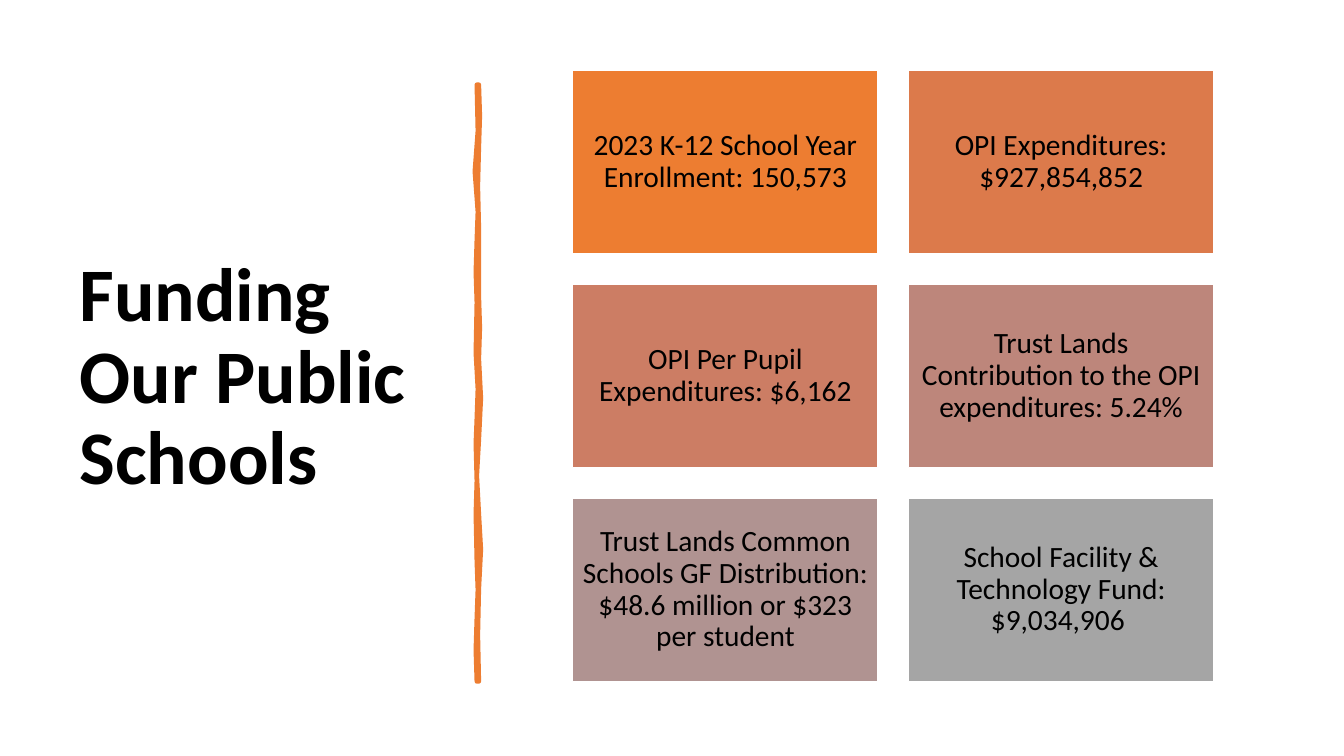
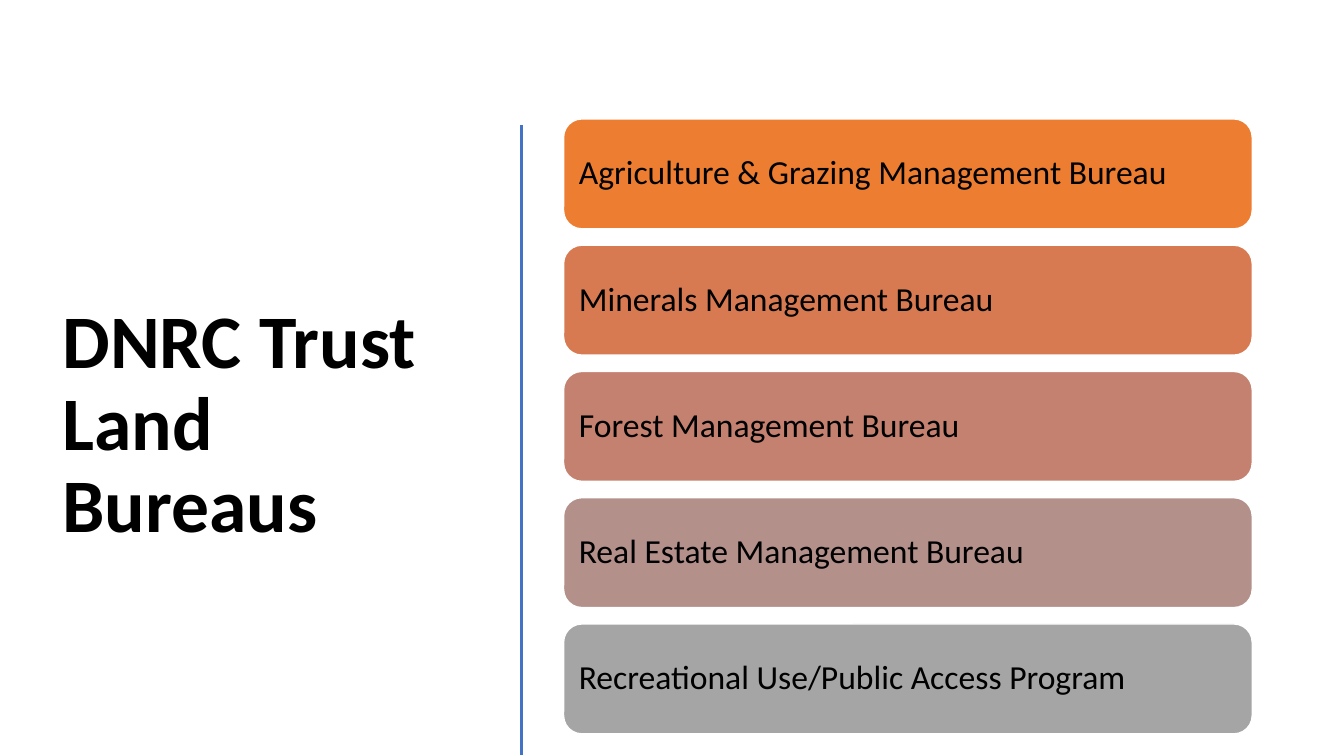
import pptx
import pptx.util
import pptx.dml.color
import pptx.enum.shapes
import pptx.enum.text
import pptx.oxml.ns
import lxml.etree

Inches = pptx.util.Inches
Pt = pptx.util.Pt
RGBColor = pptx.dml.color.RGBColor
PP_ALIGN = pptx.enum.text.PP_ALIGN
MSO_SHAPE = pptx.enum.shapes.MSO_SHAPE

FONT = "Calibri"
BLACK = RGBColor(0x00, 0x00, 0x00)
WHITE = RGBColor(0xFF, 0xFF, 0xFF)
ORANGE = RGBColor(0xED, 0x7D, 0x31)
BLUE = RGBColor(0x44, 0x72, 0xC4)
GRAY = RGBColor(0xA5, 0xA5, 0xA5)
TITLE_ONLY_LAYOUT = 5

FUNDING_FACTS = [
    ("2023 K-12 School Year Enrollment: 150,573", ORANGE),
    ("OPI Expenditures: $927,854,852", RGBColor(0xDC, 0x7A, 0x4B)),
    ("OPI Per Pupil Expenditures: $6,162", RGBColor(0xCC, 0x7D, 0x64)),
    ("Trust Lands Contribution to the OPI expenditures: 5.24%",
     RGBColor(0xBD, 0x86, 0x7B)),
    ("Trust Lands Common Schools GF Distribution: "
     "$48.6 million or $323 per student", RGBColor(0xB0, 0x93, 0x91)),
    ("School Facility & Technology Fund: $9,034,906 ", GRAY),
]
BUREAUS = [
    ("Agriculture & Grazing Management Bureau", ORANGE),
    ("Minerals Management Bureau", RGBColor(0xD8, 0x7A, 0x51)),
    ("Forest Management Bureau", RGBColor(0xC4, 0x81, 0x70)),
    ("Real Estate Management Bureau", RGBColor(0xB4, 0x90, 0x8B)),
    ("Recreational Use/Public Access Program", GRAY),
]
BRUSH_OUTLINE = [
    (4.75, 0.84), (4.76, 1.15), (4.75, 1.46), (4.74, 1.85), (4.75, 2.26),
    (4.75, 2.94), (4.76, 3.25), (4.75, 3.56), (4.77, 3.95), (4.75, 4.36),
    (4.73, 4.72), (4.75, 5.1), (4.77, 5.45), (4.75, 5.84), (4.74, 6.3),
    (4.75, 6.76), (4.73, 6.76), (4.72, 6.45), (4.73, 6.13), (4.74, 5.85),
    (4.73, 5.57), (4.72, 5.1), (4.73, 4.77), (4.72, 4.4), (4.73, 4.15),
    (4.74, 3.86), (4.72, 3.5), (4.73, 3.0), (4.72, 2.7), (4.73, 2.38),
    (4.74, 2.1), (4.71, 1.7), (4.74, 1.3), (4.73, 0.84),
]


def write_text(frame, text, size, bold=False, align=PP_ALIGN.LEFT, inset=0.1):
    frame.word_wrap = True
    frame.auto_size = pptx.enum.text.MSO_AUTO_SIZE.NONE
    frame.vertical_anchor = pptx.enum.text.MSO_ANCHOR.MIDDLE
    frame.margin_left = frame.margin_right = Inches(inset)
    frame.margin_top = frame.margin_bottom = Inches(min(inset, 0.1))
    paragraph = frame.paragraphs[0]
    paragraph.alignment = align
    paragraph.line_spacing = 0.9
    run = paragraph.add_run()
    run.text = text
    run.font.name = FONT
    run.font.size = Pt(size)
    run.font.bold = bold
    run.font.color.rgb = BLACK


def add_titled_slide(presentation, title, left, top, width, height):
    layout = presentation.slide_layouts[TITLE_ONLY_LAYOUT]
    slide = presentation.slides.add_slide(layout)
    placeholder = slide.shapes.title
    placeholder.left, placeholder.top = Inches(left), Inches(top)
    placeholder.width, placeholder.height = Inches(width), Inches(height)
    write_text(placeholder.text_frame, title, size=54, bold=True)
    return slide


def paint(shape, fill, line, line_width):
    shape.shadow.inherit = False
    shape.fill.solid()
    shape.fill.fore_color.rgb = fill
    shape.line.color.rgb = line
    shape.line.width = Pt(line_width)


def add_card(slide, kind, left, top, width, height, text, fill, **text_format):
    shape = slide.shapes.add_shape(
        kind, Inches(left), Inches(top), Inches(width), Inches(height))
    paint(shape, fill, WHITE, 1)
    write_text(shape.text_frame, text, **text_format)


def add_brush_stroke(slide):
    points = [(Inches(x), Inches(y)) for x, y in BRUSH_OUTLINE]
    builder = slide.shapes.build_freeform(*points[0])
    builder.add_line_segments(points[1:], close=True)
    stroke = builder.convert_to_shape()
    paint(stroke, ORANGE, ORANGE, 3.25)
    lxml.etree.SubElement(
        stroke.line._get_or_add_ln(), pptx.oxml.ns.qn("a:round"))


def add_divider(slide, x, top, bottom):
    divider = slide.shapes.add_connector(
        pptx.enum.shapes.MSO_CONNECTOR.STRAIGHT,
        Inches(x), Inches(top), Inches(x), Inches(bottom))
    divider.line.color.rgb = BLUE
    divider.line.width = Pt(2)
    lxml.etree.SubElement(
        divider._element.spPr, pptx.oxml.ns.qn("a:effectLst"))


def build_funding_slide(presentation):
    slide = add_titled_slide(
        presentation, "Funding Our Public Schools", 0.69, 0.7, 3.74, 6.11)
    add_brush_stroke(slide)
    for index, (text, fill) in enumerate(FUNDING_FACTS):
        row, column = divmod(index, 2)
        add_card(slide, MSO_SHAPE.RECTANGLE,
                 5.68 + 3.33 * column, 0.7 + 2.12 * row, 3.03, 1.82,
                 text, fill, size=21, align=PP_ALIGN.CENTER, inset=0.09)


def build_bureaus_slide(presentation):
    slide = add_titled_slide(
        presentation, "DNRC Trust Land Bureaus", 0.52, 1.17, 4.31, 6.11)
    add_divider(slide, 5.17, 1.24, 7.49)
    first_top, last_top = 1.18, 6.19
    pitch = (last_top - first_top) / (len(BUREAUS) - 1)
    for row, (text, fill) in enumerate(BUREAUS):
        add_card(slide, MSO_SHAPE.ROUNDED_RECTANGLE,
                 5.59, first_top + pitch * row, 6.83, 1.09,
                 text, fill, size=24)


def main():
    presentation = pptx.Presentation()
    presentation.slide_width = Inches(13.33)
    presentation.slide_height = Inches(7.5)
    build_funding_slide(presentation)
    build_bureaus_slide(presentation)
    presentation.save("out.pptx")


if __name__ == "__main__":
    main()
